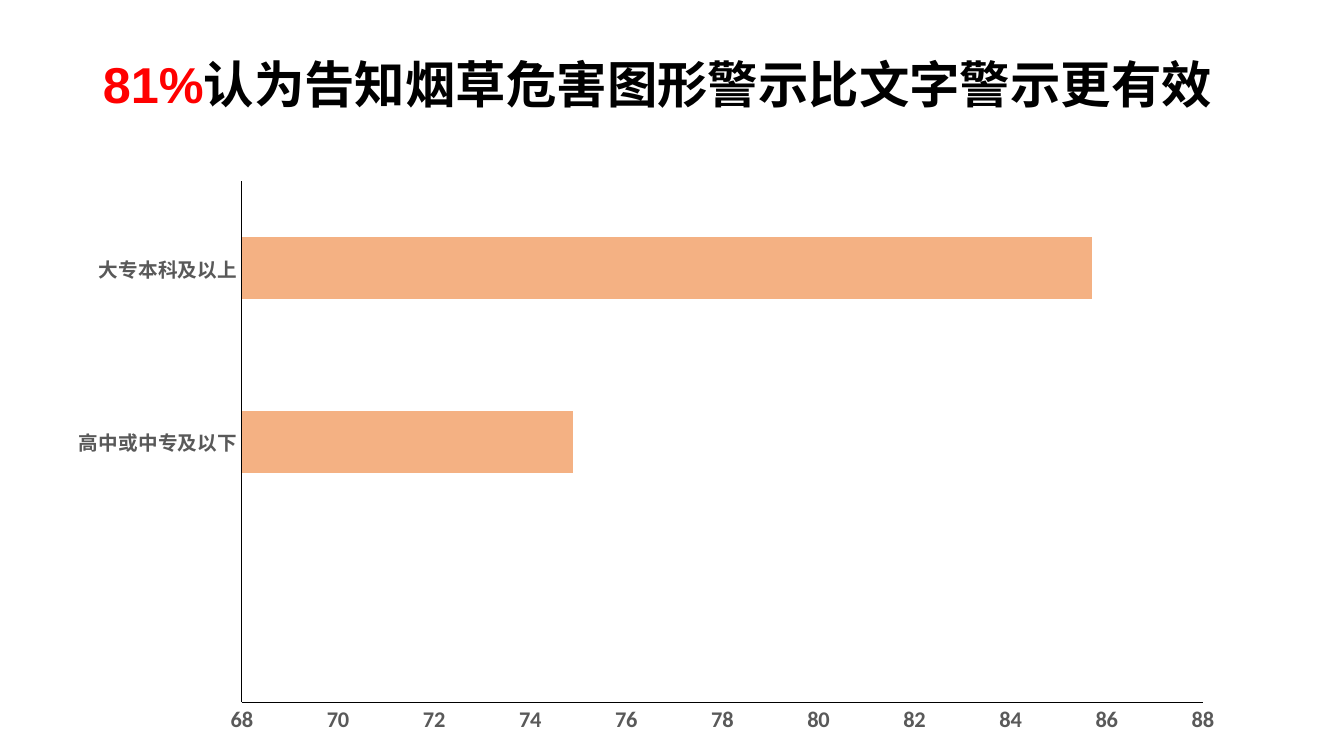
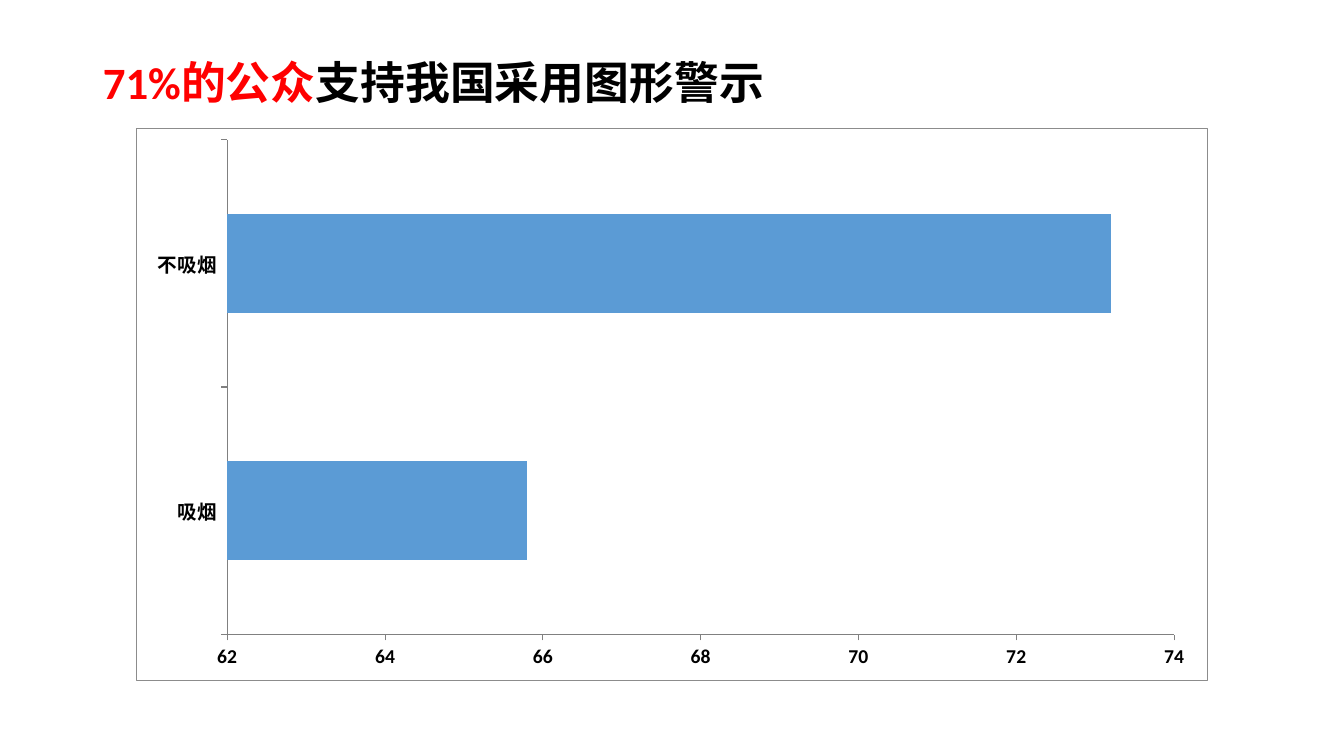
from dataclasses import dataclass

from lxml import etree
from pptx import Presentation
from pptx.chart.data import CategoryChartData
from pptx.dml.color import RGBColor
from pptx.enum.chart import XL_CHART_TYPE, XL_TICK_MARK
from pptx.enum.text import MSO_ANCHOR, MSO_AUTO_SIZE, PP_ALIGN
from pptx.oxml import parse_xml
from pptx.oxml.ns import nsdecls, qn
from pptx.util import Inches, Pt

BAR = XL_CHART_TYPE.BAR_CLUSTERED
NO_TICK, OUTER_TICK = XL_TICK_MARK.NONE, XL_TICK_MARK.OUTSIDE
LEFT, MIDDLE, FIXED = PP_ALIGN.LEFT, MSO_ANCHOR.MIDDLE, MSO_AUTO_SIZE.NONE


@dataclass(frozen=True)
class Theme:
    width: float = 13.33
    height: float = 7.5
    title_left: float = 0.92
    title_top: float = 0.4
    title_width: float = 11.5
    font: str = "Calibri"
    black: str = "000000"
    red: str = "FF0000"
    gray: str = "595959"
    axis_gray: str = "808080"
    border_gray: str = "8C8C8C"
    orange: str = "F4B183"
    blue: str = "5B9BD5"
    base_size: int = 10
    label_size: int = 14
    large_label_size: int = 16
    line: float = 0.75


THEME = Theme()

SLIDES = [
    {
        "title": [("81%", THEME.red), ("认为告知烟草危害图形警示比文字警示更有效", THEME.black)],
        "title_font": "Arial", "title_size": 36, "title_height": 0.93,
        "chart_box": (0.54, 1.69, 11.74, 5.7),
        "plot_box": (2.4, 1.8, 9.53, 5.17),
        "bars": [("", None), ("高中或中专及以下", 74.9), ("大专本科及以上", 85.7)],
        "scale": (68, 88), "gap": 182, "tick": NO_TICK,
        "bar_color": THEME.orange, "label_color": THEME.gray, "axis_color": THEME.black,
        "value_size": THEME.large_label_size, "border": None,
    },
    {
        "title": [("71%的公众", THEME.red), ("支持我国采用图形警示", THEME.black)],
        "title_font": THEME.font, "title_size": 32, "title_height": 0.89,
        "chart_box": (1.35, 1.27, 10.63, 5.49),
        "plot_box": (2.25, 1.38, 9.4, 4.92),
        "bars": [("吸烟", 65.8), ("不吸烟", 73.2)],
        "scale": (62, 74), "gap": 150, "tick": OUTER_TICK,
        "bar_color": THEME.blue, "label_color": THEME.black, "axis_color": THEME.axis_gray,
        "value_size": THEME.label_size, "border": THEME.border_gray,
    },
]


def format_font(font, name, size, color, bold):
    font.name, font.size, font.bold = name, Pt(size), bold
    font.color.rgb = RGBColor.from_string(color)


def set_title(page, content):
    title = page.shapes.title
    title.left, title.top = Inches(THEME.title_left), Inches(THEME.title_top)
    title.width, title.height = Inches(THEME.title_width), Inches(content["title_height"])
    frame = title.text_frame
    frame.word_wrap, frame.auto_size, frame.vertical_anchor = True, FIXED, MIDDLE
    para = frame.paragraphs[0]
    para.alignment, para.line_spacing = LEFT, 0.9
    for text, color in content["title"]:
        span = para.add_run()
        span.text = text
        format_font(span.font, content["title_font"], content["title_size"], color, True)


def format_axis(axis, content, size):
    axis.has_major_gridlines = False
    axis.major_tick_mark, axis.minor_tick_mark = content["tick"], NO_TICK
    axis.format.line.color.rgb = RGBColor.from_string(content["axis_color"])
    axis.format.line.width = Pt(THEME.line)
    format_font(axis.tick_labels.font, THEME.font, size, content["label_color"], True)


def place_plot(chart, chart_box, plot_box):
    left, top, width, height = chart_box
    x, y, w, h = plot_box
    shares = {"x": (x - left) / width, "y": (y - top) / height, "w": w / width, "h": h / height}
    area = chart.element.find(qn("c:chart")).find(qn("c:plotArea"))
    for old in area.findall(qn("c:layout")):
        area.remove(old)
    layout = etree.Element(qn("c:layout"))
    manual = etree.SubElement(layout, qn("c:manualLayout"))
    settings = {"layoutTarget": "inner", "xMode": "edge", "yMode": "edge"}
    settings.update({key: f"{share:.4f}" for key, share in shares.items()})
    for tag, setting in settings.items():
        etree.SubElement(manual, qn(f"c:{tag}")).set("val", setting)
    area.insert(0, layout)


def add_border(chart, color):
    chart.element.find(qn("c:chart")).addnext(parse_xml(
        f'<c:spPr {nsdecls("c", "a")}><a:noFill/><a:ln w="{Pt(THEME.line)}"><a:solidFill>'
        f'<a:srgbClr val="{color}"/></a:solidFill></a:ln></c:spPr>'))
    corners = etree.Element(qn("c:roundedCorners"))
    corners.set("val", "0")
    chart.element.find(qn("c:date1904")).addnext(corners)


def add_bar_chart(page, content):
    names, values = zip(*content["bars"])
    chart_data = CategoryChartData(number_format="General")
    chart_data.categories = names
    chart_data.add_series("Series 1", values)
    box = [Inches(length) for length in content["chart_box"]]
    chart = page.shapes.add_chart(BAR, *box, chart_data).chart
    chart.has_title = chart.has_legend = False
    format_font(chart.font, THEME.font, THEME.base_size, THEME.black, False)

    plot = chart.plots[0]
    plot.gap_width, plot.vary_by_categories = content["gap"], False
    fill = plot.series[0].format.fill
    fill.solid()
    fill.fore_color.rgb = RGBColor.from_string(content["bar_color"])

    format_axis(chart.category_axis, content, THEME.label_size)
    value_axis = chart.value_axis
    format_axis(value_axis, content, content["value_size"])
    value_axis.minimum_scale, value_axis.maximum_scale = content["scale"]
    value_axis.major_unit = 2
    place_plot(chart, content["chart_box"], content["plot_box"])
    if content["border"]:
        add_border(chart, content["border"])


def main():
    deck = Presentation()
    deck.slide_width, deck.slide_height = Inches(THEME.width), Inches(THEME.height)
    title_only = deck.slide_layouts.get_by_name("Title Only")
    for content in SLIDES:
        page = deck.slides.add_slide(title_only)
        set_title(page, content)
        add_bar_chart(page, content)
    deck.save("out.pptx")


if __name__ == "__main__":
    main()
